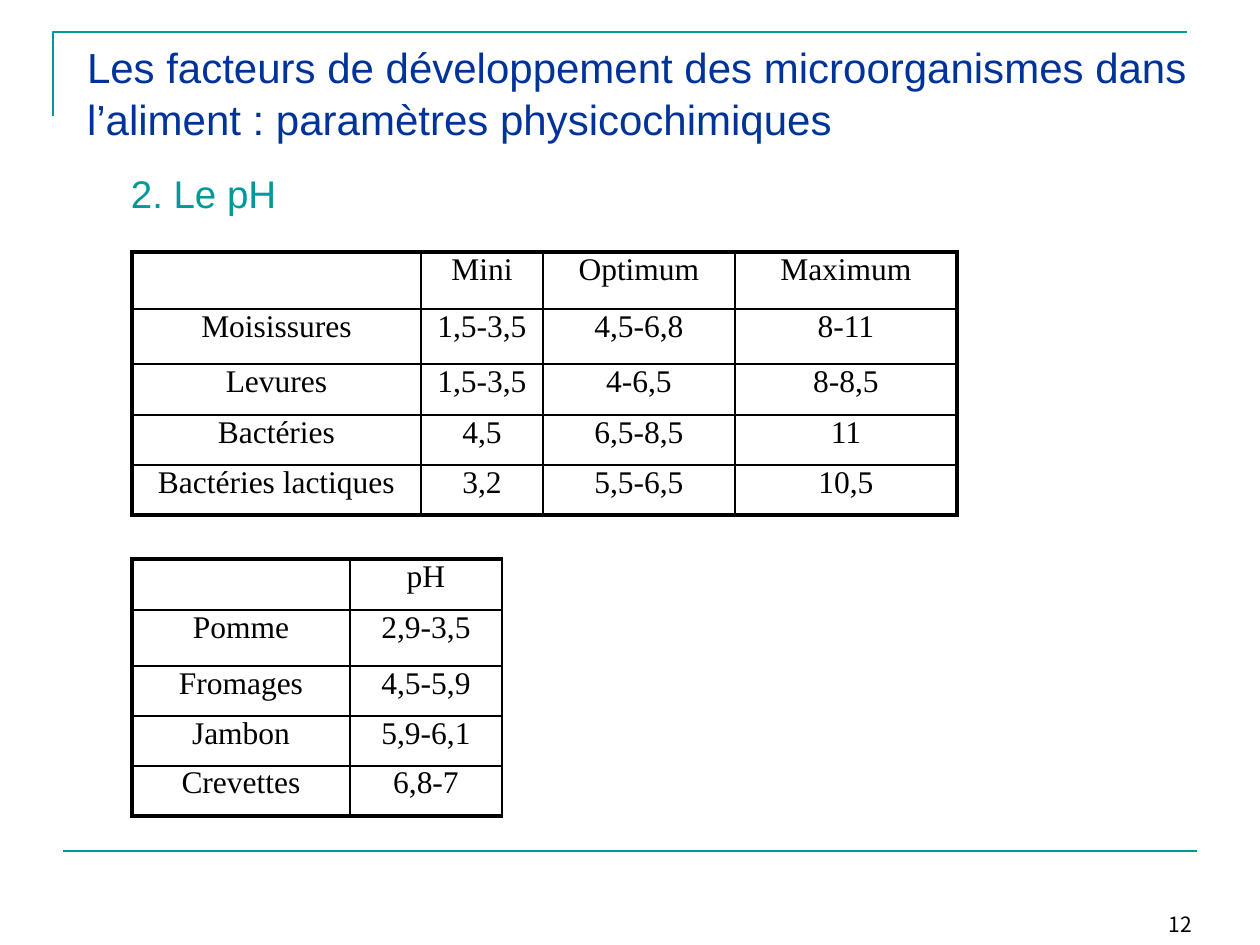
import pptx
import pptx.dml.color
import pptx.enum.shapes
import pptx.enum.text
import pptx.oxml
import pptx.oxml.ns
import pptx.util

PX = 914400 / 126
TEAL, NAVY, BLACK = "009999", "003399", "000000"
THIN, THICK = 1, 2.25
ALIGN = pptx.enum.text.PP_ALIGN

GROWTH = [
    ["", "Mini", "Optimum", "Maximum"],
    ["Moisissures", "1,5-3,5", "4,5-6,8", "8-11"],
    ["Levures", "1,5-3,5", "4-6,5", "8-8,5"],
    ["Bactéries", "4,5", "6,5-8,5", "11"],
    ["Bactéries lactiques", "3,2", "5,5-6,5", "10,5"],
]
FOODS = [
    ["", "pH"],
    ["Pomme", "2,9-3,5"],
    ["Fromages", "4,5-5,9"],
    ["Jambon", "5,9-6,1"],
    ["Crevettes", "6,8-7"],
]


def emu(px):
    return pptx.util.Emu(round(px * PX))


def paint(text):
    return pptx.dml.color.RGBColor.from_string(text)


class Deck:
    """Holds the presentation, its current slide and the shared style."""

    def __init__(self):
        self.show = pptx.Presentation()
        self.show.slide_width = emu(1260)
        self.show.slide_height = emu(945)
        self.slide = self.show.slides.add_slide(self.show.slide_layouts[5])
        self.shapes = self.slide.shapes

    def place(self, shape, x, y, w, h):
        shape.left, shape.top = emu(x), emu(y)
        shape.width, shape.height = emu(w), emu(h)

    def fill(self, frame, text, size, font, color, align=ALIGN.LEFT):
        """Put styled text in a frame."""
        frame.text = text
        for para in frame.paragraphs:
            para.alignment = align
            for run in para.runs:
                run.font.size = pptx.util.Pt(size)
                run.font.name = font
                run.font.color.rgb = paint(color)

    def flush(self, frame, inset=0):
        """Remove the margins, apart from a left inset."""
        frame.margin_left = emu(inset)
        frame.margin_top = frame.margin_right = frame.margin_bottom = 0

    def title(self, box, text, inset):
        shape = self.shapes.title
        self.place(shape, *box)
        frame = shape.text_frame
        self.fill(frame, text, 24, "Arial", NAVY)
        self.flush(frame, inset)
        frame.word_wrap = False
        frame.auto_size = pptx.enum.text.MSO_AUTO_SIZE.NONE
        frame.vertical_anchor = pptx.enum.text.MSO_ANCHOR.MIDDLE
        frame.paragraphs[1].space_before = pptx.util.Pt(1)

    def label(self, box, text, size, font, color, inset):
        frame = self.shapes.add_textbox(*map(emu, box)).text_frame
        self.fill(frame, text, size, font, color)
        self.flush(frame, inset)
        frame.word_wrap = True
        return frame.paragraphs[0]

    def stroke(self, line):
        line.color.rgb = paint(TEAL)
        line.width = pptx.util.Pt(1.5)

    def corner(self, start, *points):
        maker = self.shapes.build_freeform(*start, scale=PX)
        maker.add_line_segments(points, close=False)
        shape = maker.convert_to_shape()
        shape.shadow.inherit = False
        shape.fill.background()
        self.stroke(shape.line)

    def rule(self, x, y, w):
        kind = pptx.enum.shapes.MSO_CONNECTOR.STRAIGHT
        line = self.shapes.add_connector(
            kind, emu(x), emu(y), emu(x + w), emu(y))
        props = line._element.spPr
        self.stroke(line.line)
        props.append(pptx.oxml.parse_xml(
            f'<a:effectLst {pptx.oxml.ns.nsdecls("a")}/>'))

    def border(self, cell, widths):
        """Draw the left, right, top and bottom borders, in that order."""
        props = cell._tc.get_or_add_tcPr()
        for i, (side, width) in enumerate(zip("LRTB", widths)):
            props.insert(i, pptx.oxml.parse_xml(
                f'<a:ln{side} {pptx.oxml.ns.nsdecls("a")} '
                f'w="{pptx.util.Pt(width)}"><a:solidFill>'
                f'<a:srgbClr val="{BLACK}"/></a:solidFill></a:ln{side}>'))

    def table(self, x, y, cols, rows, data, right=THICK):
        table = self.shapes.add_table(
            len(rows), len(cols), emu(x), emu(y),
            emu(sum(cols)), emu(sum(rows))).table
        table.first_row = table.horz_banding = False
        for col, width in zip(table.columns, cols):
            col.width = emu(width)
        for row, height in zip(table.rows, rows):
            row.height = emu(height)
        for r, line in enumerate(data):
            for c, text in enumerate(line):
                cell = table.cell(r, c)
                self.flush(cell)
                cell.fill.background()
                self.fill(cell.text_frame, text, 18, "Times New Roman",
                          BLACK, ALIGN.CENTER)
                self.border(cell, [
                    THICK if c == 0 else THIN,
                    right if c == len(cols) - 1 else THIN,
                    THICK if r == 0 else THIN,
                    THICK if r == len(rows) - 1 else THIN,
                ])


def main():
    deck = Deck()
    deck.corner((53, 116), (53, 32), (1187, 32))
    deck.rule(63, 851, 1134)
    deck.title((71, 42, 1118, 102),
               "Les facteurs de développement des microorganismes dans\n"
               "l’aliment : paramètres physicochimiques", 16)
    page = deck.label((1166, 915, 30, 25), "12", 12,
                      "Noto Sans CJK TC", BLACK, 3)
    page.line_spacing = pptx.util.Pt(12.6)
    deck.label((129, 170, 160, 48), "2. Le pH", 22, "Arial", TEAL, 2)
    deck.table(132, 252, [289, 122, 192, 222], [57, 55, 51, 50, 50], GROWTH)
    deck.table(132, 559, [218, 152], [51, 56, 50, 50, 50], FOODS, THIN)
    deck.show.save("out.pptx")


if __name__ == "__main__":
    main()
